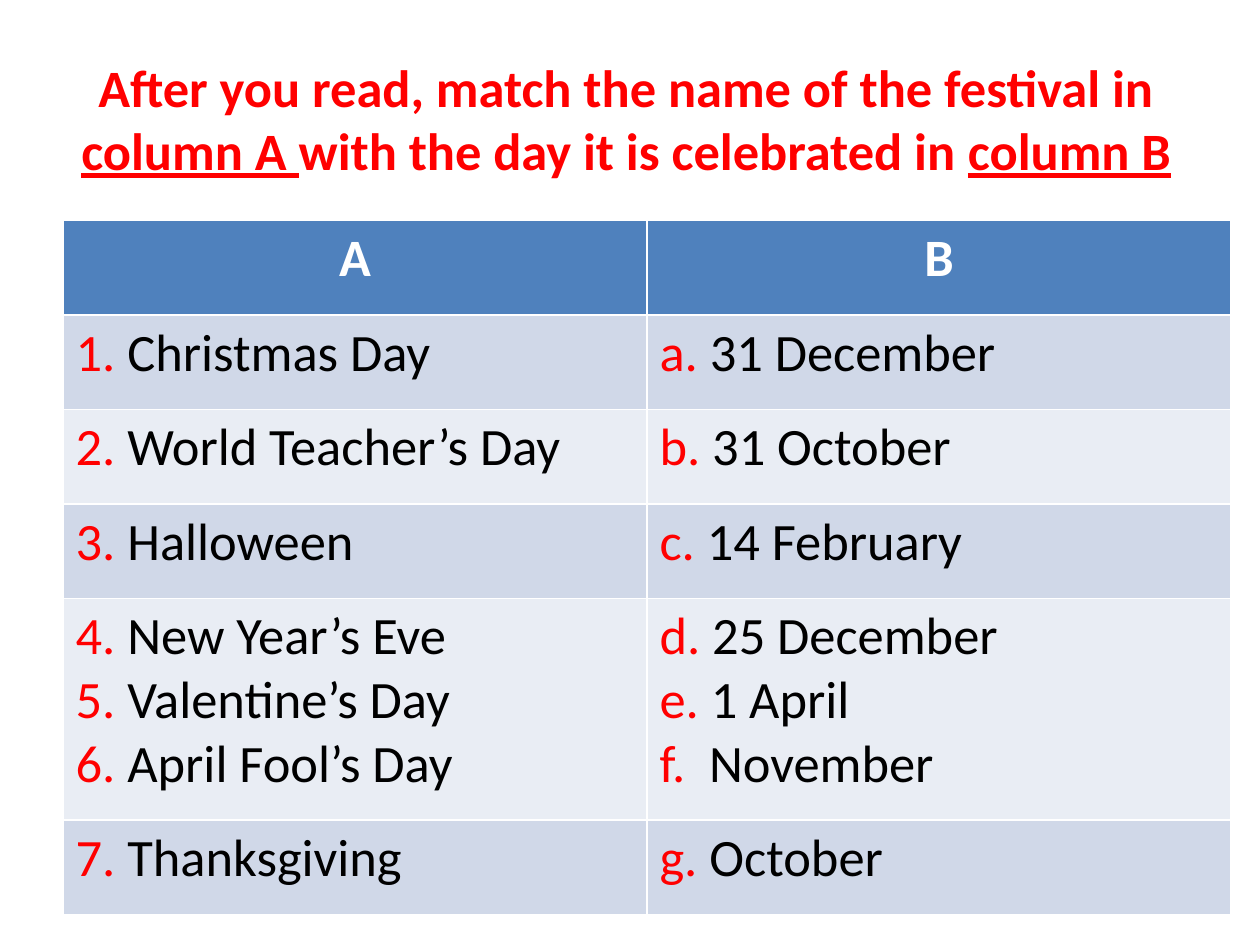
from dataclasses import dataclass

from pptx import Presentation
from pptx.dml.color import RGBColor
from pptx.enum.text import MSO_ANCHOR, PP_ALIGN
from pptx.util import Inches, Pt


@dataclass(frozen=True)
class Theme:
    font: str = "Calibri"
    size: float = 30
    accent: str = "FF0000"
    text: str = "000000"
    header_text: str = "FFFFFF"
    header_fill: str = "4F81BD"
    bands: tuple = ("D0D8E8", "E9EDF4")


class Worksheet:
    """Holds the theme and the current page."""

    def __init__(self, page, theme):
        self.page = page
        self.theme = theme

    def add_span(self, para, text, color, **formats):
        span = para.add_run()
        span.text = text
        values = {"name": self.theme.font, "size": Pt(self.theme.size),
                  "bold": False, **formats}
        for name, value in values.items():
            setattr(span.font, name, value)
        span.font.color.rgb = RGBColor.from_string(color)

    def add_title(self, spans, left, top, width, height):
        box = self.page.shapes.title
        place = {"left": left, "top": top, "width": width, "height": height}
        for name, value in place.items():
            setattr(box, name, Inches(value))
        frame = box.text_frame
        frame.word_wrap = True
        frame.vertical_anchor = MSO_ANCHOR.MIDDLE
        para = frame.paragraphs[0]
        para.alignment = PP_ALIGN.CENTER
        for text, underlined in spans:
            self.add_span(para, text, self.theme.accent,
                          bold=True, underline=underlined)

    def fill_cell(self, cell, color):
        cell.fill.solid()
        cell.fill.fore_color.rgb = RGBColor.from_string(color)

    def add_header(self, cell, text):
        self.fill_cell(cell, self.theme.header_fill)
        para = cell.text_frame.paragraphs[0]
        para.alignment = PP_ALIGN.CENTER
        self.add_span(para, text, self.theme.header_text, bold=True)

    def add_items(self, cell, items, band):
        self.fill_cell(cell, band)
        frame = cell.text_frame
        for index, (label, text) in enumerate(items):
            para = frame.add_paragraph() if index else frame.paragraphs[0]
            self.add_span(para, label, self.theme.accent)
            self.add_span(para, text, self.theme.text)

    def add_matching_table(self, headers, rows, left, top, width, row_heights):
        table = self.page.shapes.add_table(
            len(rows) + 1, len(headers), Inches(left), Inches(top),
            Inches(width), Inches(sum(row_heights))).table
        for row, height in zip(table.rows, row_heights):
            row.height = Inches(height)
        for column, header in enumerate(headers):
            self.add_header(table.cell(0, column), header)
        for number, row in enumerate(rows):
            band = self.theme.bands[number % 2]
            for column, items in enumerate(row):
                self.add_items(table.cell(number + 1, column), items, band)


TITLE = [
    ("After you read, match the name of the festival in ", False),
    ("column A ", True),
    ("with the day it is celebrated in ", False),
    ("column B", True),
]

# Each row holds the items of column A and of column B
ROWS = [
    ([("1. ", "Christmas Day")], [("a. ", "31 December")]),
    ([("2. ", "World Teacher’s Day")], [("b. ", "31 October")]),
    ([("3. ", "Halloween")], [("c. ", "14 February")]),
    ([("4. ", "New Year’s Eve"), ("5. ", "Valentine’s Day"),
      ("6. ", "April Fool’s Day")],
     [("d. ", "25 December"), ("e. ", "1 April"), ("f.  ", "November")]),
    ([("7. ", "Thanksgiving")], [("g. ", "October")]),
]


def main():
    deck = Presentation()
    deck.slide_width, deck.slide_height = Inches(10), Inches(7.5)
    title_only = deck.slide_layouts[5]
    sheet = Worksheet(deck.slides.add_slide(title_only), Theme())

    # Instruction
    sheet.add_title(TITLE, 0.47, 0.31, 9, 1.25)

    # Festivals and dates
    row_heights = [0.75] * 4 + [1.76, 0.75]
    sheet.add_matching_table(("A", "B"), ROWS, 0.5, 1.75, 9.27, row_heights)

    deck.save("out.pptx")


if __name__ == "__main__":
    main()
